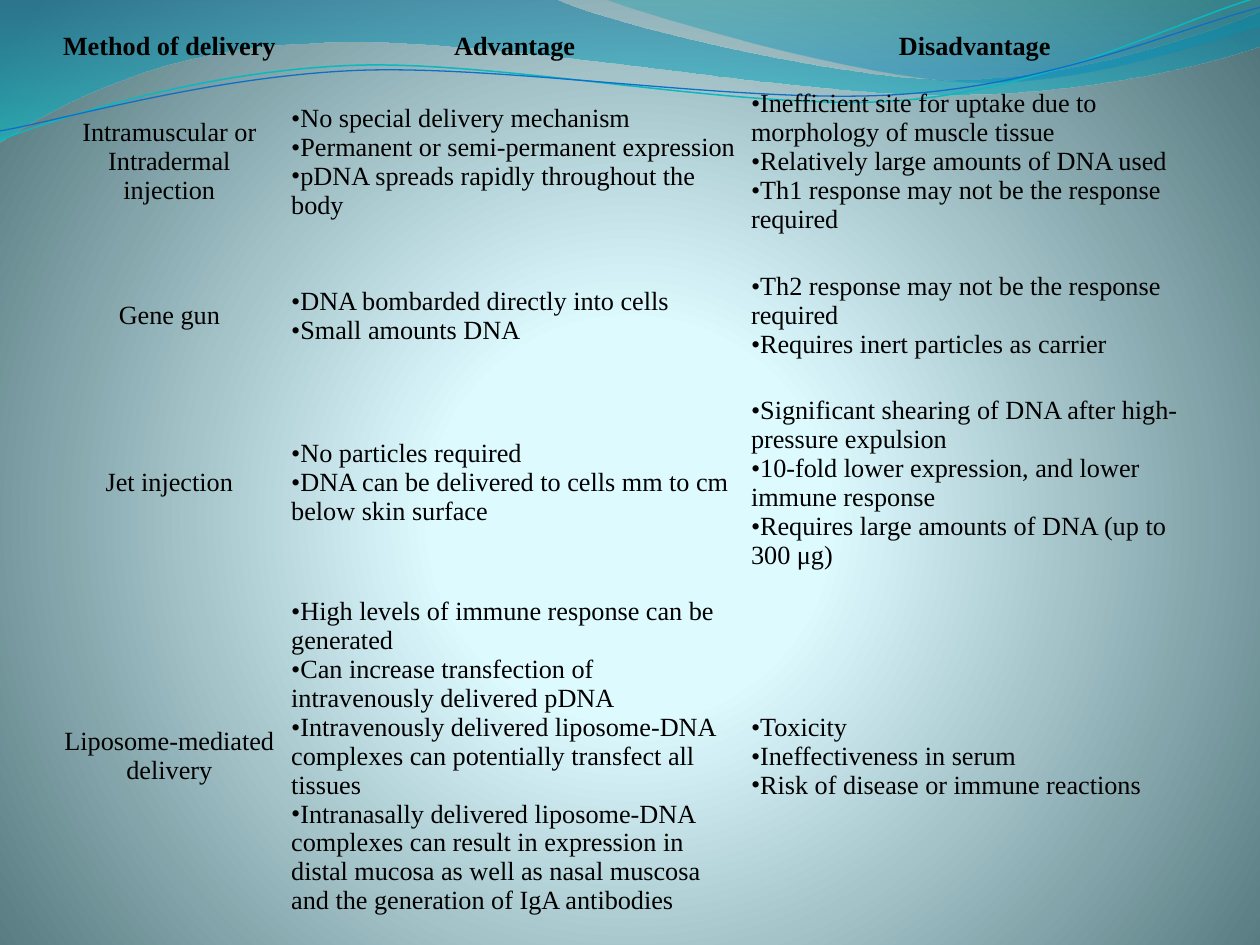
from dataclasses import dataclass
from math import cos, radians, sin

from lxml.etree import SubElement
from pptx import Presentation
from pptx.dml.color import RGBColor
from pptx.enum.text import MSO_ANCHOR, PP_ALIGN
from pptx.oxml.ns import qn
from pptx.util import Cm, Pt

COLORS = {
    "text": "000000",
    "glow": "DEFBFF", "pale": "DDFAFF", "slate": "52767C",
    "sea": "0074A1", "aqua": "00C6CF", "teal": "00A1A9", "sky": "008BBF",
    "teal line": "0AB8BF", "blue line": "0F6FC6",
}
FONT = "Times New Roman"
TILT = 2.7  # degrees counterclockwise


@dataclass
class Stop:
    position: int
    color: str
    opacity: int = 100


@dataclass
class Band:
    """Filled wave; a segment is one point (line) or three (cubic curve)."""
    start: tuple
    segments: list
    stops: list


@dataclass
class Strand:
    """Thin tilted wave line."""
    start: tuple
    segments: list
    center: tuple
    color: str
    width: float


@dataclass
class Method:
    name: str
    advantages: list
    disadvantages: list


BANDS = [
    Band((0, 0), [[(11.18, -0.03)],
                  [(12.09, 0.43), (16.87, 1.6), (19.25, 1.6)],
                  [(21.67, 1.6), (24.33, 0.66), (25.4, 0.23)],
                  [(25.43, 0.91)],
                  [(24.97, 1.12), (22.1, 1.93), (18.95, 1.91)],
                  [(15.8, 1.91), (9.7, 0.71), (6.53, 0.86)],
                  [(3.28, 0.91), (1.17, 2.11), (-0.03, 2.87)]],
         [Stop(0, "sea", 45), Stop(100, "aqua", 55)]),
    Band((12.17, -0.03), [[(12.93, 0.28), (17.32, 1.57), (19.53, 1.65)],
                          [(21.74, 1.75), (24.41, 0.81), (25.4, 0.53)],
                          [(25.4, 0)]],
         [Stop(0, "teal", 30), Stop(80, "sky", 45)]),
]
STRANDS = [
    Strand((0, 2.82), [[(1.22, 2.36), (4.01, 1.45), (7.04, 1.32)],
                       [(10.03, 1.19), (15.06, 2.26), (18.11, 2.03)],
                       [(21.16, 1.8), (23.83, 0.38), (25.35, -0.05)]],
           (12.67, 1.46), "teal line", 0.85),
    Strand((0, 2.64), [[(1.19, 2.44), (4.17, 1.55), (7.19, 1.42)],
                       [(10.24, 1.3), (15.16, 2.13), (18.21, 1.9)],
                       [(21.23, 1.7), (23.9, 0.53), (25.4, 0.15)]],
           (12.69, 1.5), "blue line", 0.75),
]

HEADINGS = ["Method of delivery", "Advantage", "Disadvantage"]
METHODS = [
    Method("Intramuscular or Intradermal injection",
           ["No special delivery mechanism",
            "Permanent or semi-permanent expression",
            "pDNA spreads rapidly throughout the body"],
           ["Inefficient site for uptake due to morphology of muscle tissue",
            "Relatively large amounts of DNA used",
            "Th1 response may not be the response required"]),
    Method("Gene gun",
           ["DNA bombarded directly into cells", "Small amounts DNA"],
           ["Th2 response may not be the response required",
            "Requires inert particles as carrier"]),
    Method("Jet injection",
           ["No particles required",
            "DNA can be delivered to cells mm to cm below skin surface"],
           ["Significant shearing of DNA after high-pressure expulsion",
            "10-fold lower expression, and lower immune response",
            "Requires large amounts of DNA (up to 300 μg)"]),
    Method("Liposome-mediated delivery",
           ["High levels of immune response can be generated",
            "Can increase transfection of intravenously delivered pDNA",
            "Intravenously delivered liposome-DNA complexes can potentially "
            "transfect all tissues",
            "Intranasally delivered liposome-DNA complexes can result in "
            "expression in distal mucosa as well as nasal muscosa and the "
            "generation of IgA antibodies"],
           ["Toxicity", "Ineffectiveness in serum",
            "Risk of disease or immune reactions"]),
]
COLUMN_WIDTHS = [4.65, 9.27, 9.28]
ROW_HEIGHTS = [1.24, 3.38, 2.84, 3.89, 7.13]
NO_STYLE_NO_GRID = "{2D5ABB26-0587-4C30-8999-92F81FD0307C}"


def rgb(name: str) -> RGBColor:
    return RGBColor.from_string(COLORS[name])


def set_gradient(fill, owner, stops: list, circular: bool = False) -> None:
    fill.gradient()
    gradient = owner.find(".//" + qn("a:gradFill"))
    for child in list(gradient):
        gradient.remove(child)
    stop_list = SubElement(gradient, qn("a:gsLst"))
    for stop in stops:
        mark = SubElement(stop_list, qn("a:gs"), pos=str(stop.position * 1000))
        color = SubElement(mark, qn("a:srgbClr"), val=COLORS[stop.color])
        if stop.opacity < 100:
            SubElement(color, qn("a:alpha"), val=str(stop.opacity * 1000))
    if circular:
        route = SubElement(gradient, qn("a:path"), path="circle")
        SubElement(route, qn("a:fillToRect"), l="10000", t="110000",
                   r="10000", b="100000")
    else:
        SubElement(gradient, qn("a:lin"), ang="5400000", scaled="0")


def turn(point: tuple, center: tuple, degrees: float) -> tuple:
    dx, dy = point[0] - center[0], point[1] - center[1]
    cosine, sine = cos(radians(degrees)), sin(radians(degrees))
    return center[0] + dx * cosine - dy * sine, center[1] + dx * sine + dy * cosine


def add_outline(page, start: tuple, segments: list, close: bool):
    """Build a freeform and bend each three-point segment into a curve."""
    corners = [(Cm(x), Cm(y)) for segment in segments for x, y in segment]
    builder = page.shapes.build_freeform(Cm(start[0]), Cm(start[1]))
    builder.add_line_segments(corners, close=close)
    shape = builder.convert_to_shape()
    shape.shadow.inherit = False
    route = shape._element.find(".//" + qn("a:path"))
    lines = iter(route.findall(qn("a:lnTo")))
    for segment in segments:
        first, *others = [next(lines) for _ in segment]
        if others:
            first.tag = qn("a:cubicBezTo")
            for line in others:
                first.append(line[0])
                route.remove(line)
    return shape


def draw_band(page, band: Band) -> None:
    shape = add_outline(page, band.start, band.segments, True)
    set_gradient(shape.fill, shape._element.spPr, band.stops)
    shape.line.fill.background()


def draw_strand(page, strand: Strand) -> None:
    start = turn(strand.start, strand.center, TILT)
    segments = [[turn(point, strand.center, TILT) for point in segment]
                for segment in strand.segments]
    shape = add_outline(page, start, segments, False)
    shape.rotation = -TILT
    shape.fill.background()
    shape.line.color.rgb = rgb(strand.color)
    shape.line.width = Pt(strand.width)


def fill_cell(cell, lines: list, bold: bool = False, bulleted: bool = False) -> None:
    cell.fill.background()
    cell.vertical_anchor = MSO_ANCHOR.MIDDLE
    cell.margin_left = cell.margin_right = Cm(0.13)
    cell.margin_top = cell.margin_bottom = Cm(0.05)
    cell.text_frame.text = "\n".join(lines)
    for paragraph in cell.text_frame.paragraphs:
        if bulleted:
            properties = paragraph._p.get_or_add_pPr()
            SubElement(properties, qn("a:buFont"), typeface=FONT)
            SubElement(properties, qn("a:buChar"), char="•")
        else:
            paragraph.alignment = PP_ALIGN.CENTER
        for span in paragraph.runs:
            span.font.name, span.font.size = FONT, Pt(15)
            span.font.bold, span.font.color.rgb = bold, rgb("text")


def draw_table(page) -> None:
    frame = page.shapes.add_table(len(ROW_HEIGHTS), len(COLUMN_WIDTHS), Cm(1.09),
                                  Cm(0.33), Cm(sum(COLUMN_WIDTHS)), Cm(sum(ROW_HEIGHTS)))
    table = frame.table
    table.first_row = table.horz_banding = False
    table._tbl.tblPr.find(qn("a:tableStyleId")).text = NO_STYLE_NO_GRID
    for column, width in zip(table.columns, COLUMN_WIDTHS):
        column.width = Cm(width)
    for row, height in zip(table.rows, ROW_HEIGHTS):
        row.height = Cm(height)
    for index, heading in enumerate(HEADINGS):
        fill_cell(table.cell(0, index), [heading], bold=True)
    for index, method in enumerate(METHODS, start=1):
        fill_cell(table.cell(index, 0), [method.name])
        fill_cell(table.cell(index, 1), method.advantages, bulleted=True)
        fill_cell(table.cell(index, 2), method.disadvantages, bulleted=True)


def main() -> None:
    deck = Presentation()
    deck.slide_width, deck.slide_height = Cm(25.4), Cm(19.05)
    page = deck.slides.add_slide(deck.slide_layouts[6])
    # Background glow, then the waves along the top
    set_gradient(page.background.fill, page._element,
                 [Stop(0, "glow"), Stop(25, "pale"), Stop(100, "slate")], circular=True)
    for band in BANDS:
        draw_band(page, band)
    for strand in STRANDS:
        draw_strand(page, strand)
    # Delivery methods
    draw_table(page)
    deck.save("out.pptx")


if __name__ == "__main__":
    main()
